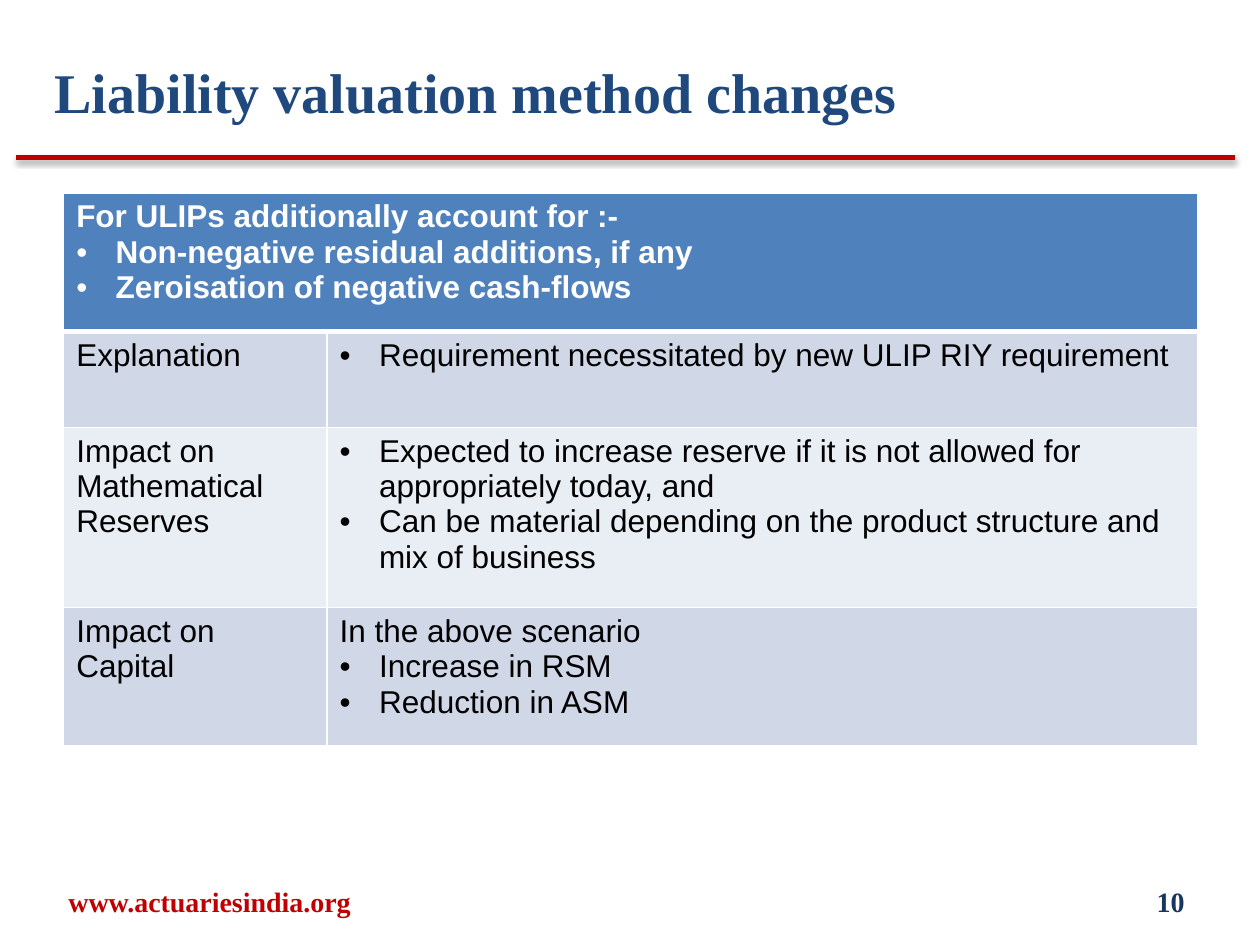
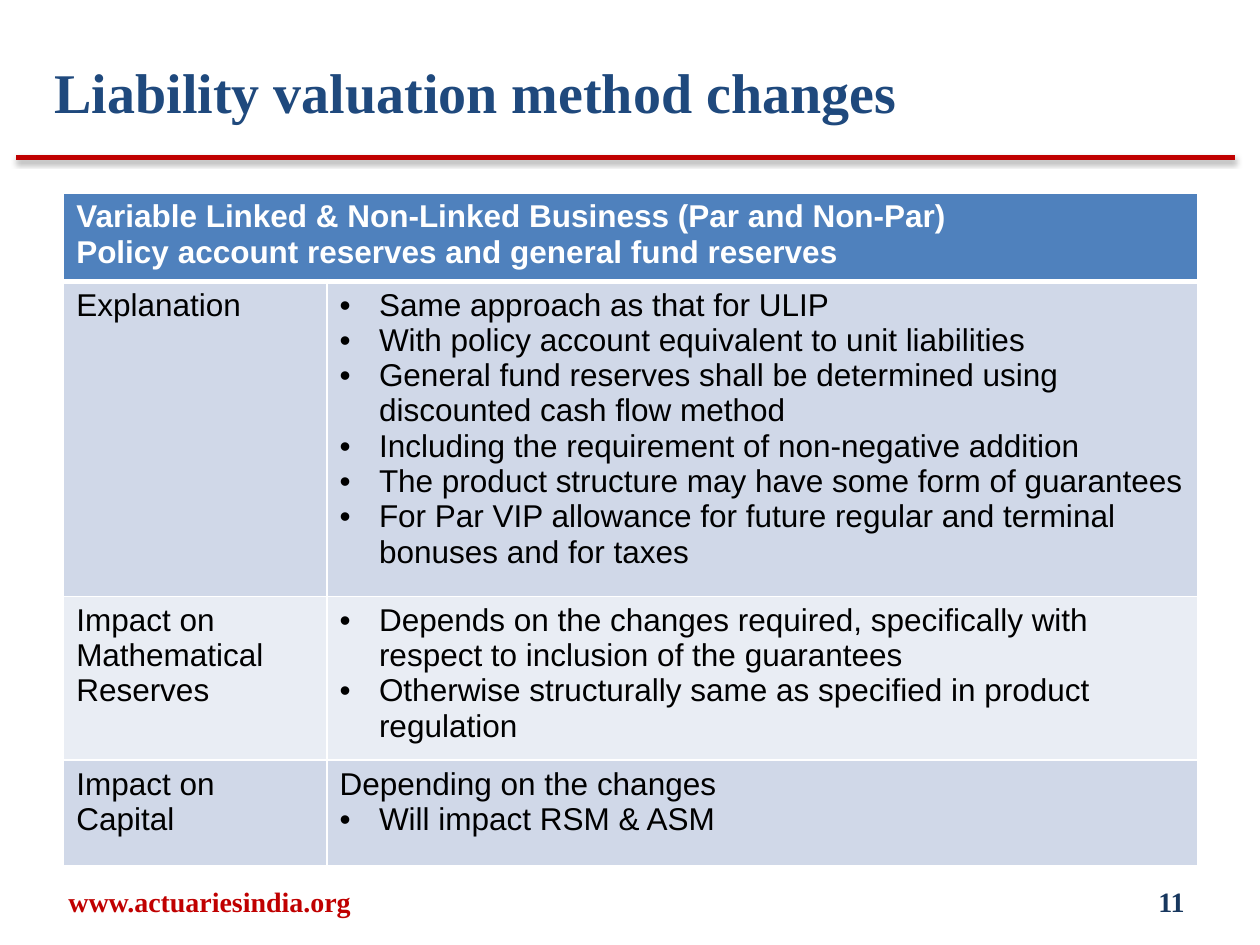
from lxml.etree import SubElement as Sub
from pptx import Presentation
from pptx.dml.color import RGBColor
from pptx.enum.shapes import MSO_CONNECTOR as Link
from pptx.enum.text import MSO_ANCHOR as Anchor, MSO_AUTO_SIZE as Fit, PP_ALIGN as Align
from pptx.oxml.ns import qn
from pptx.util import Pt

RED = RGBColor(0xC0, 0x00, 0x00)
NAVY = RGBColor(0x17, 0x37, 0x5E)
BLUE = RGBColor(0x1F, 0x49, 0x7D)
HEAD = RGBColor(0x4F, 0x81, 0xBD)
DARK = RGBColor(0xD0, 0xD8, 0xE8)
PALE = RGBColor(0xE9, 0xED, 0xF4)
WHITE = RGBColor(0xFF, 0xFF, 0xFF)
BLACK = RGBColor(0x00, 0x00, 0x00)

TITLE = "Liability valuation method changes"
SITE = "www.actuariesindia.org"
FIRST = 10
LABELS = ["Explanation", "Impact on Mathematical Reserves", "Impact on Capital"]
DOT = "• "  # marks a bulleted line in the lists below

SLIDES = [
    {
        "head": ["For ULIPs additionally account for :-",
                 "• Non-negative residual additions, if any",
                 "• Zeroisation of negative cash-flows"],
        "notes": [
            ["• Requirement necessitated by new ULIP RIY requirement"],
            ["• Expected to increase reserve if it is not allowed for appropriately today, and",
             "• Can be material depending on the product structure and mix of business"],
            ["In the above scenario",
             "• Increase in RSM",
             "• Reduction in ASM"],
        ],
        "rows": [79, 55, 103, 79],
    },
    {
        "head": ["Variable Linked & Non-Linked Business (Par and Non-Par)",
                 "Policy account reserves and general fund reserves"],
        "notes": [
            ["• Same approach as that for ULIP",
             "• With policy account equivalent to unit liabilities",
             "• General fund reserves shall be determined using discounted cash flow method",
             "• Including the requirement of non-negative addition",
             "• The product structure may have some form of guarantees",
             "• For Par VIP allowance for future regular and terminal bonuses and for taxes"],
            ["• Depends on the changes required, specifically with respect to "
             "inclusion of the guarantees",
             "• Otherwise structurally same as specified in product regulation"],
            ["Depending on the changes",
             "• Will impact RSM & ASM"],
        ],
        "rows": [47, 168.5, 87.5, 60.5],
    },
]

COLS = [150.5, 497.5]
INDENT = 22.5
TITLE_FONT = {"name": "Times New Roman", "size": Pt(32), "bold": True}
FOOT_FONT = {"name": "Times New Roman", "size": Pt(16), "bold": True}
CELL_FONT = {"name": "Arial", "size": Pt(18)}


def style(font, look, color):
    for key, value in look.items():
        setattr(font, key, value)
    font.color.rgb = color


def add_rule(slide):
    line = slide.shapes.add_connector(Link.STRAIGHT, Pt(9.4), Pt(90), Pt(705.6), Pt(90))
    line.line.color.rgb = RED
    line.line.width = Pt(3)
    glow = Sub(line._element.spPr, qn("a:effectLst"))
    shade = Sub(glow, qn("a:outerShdw"), blurRad=str(Pt(3.1)), dist=str(Pt(1.6)),
                dir="5400000", rotWithShape="0")
    tone = Sub(shade, qn("a:srgbClr"), val=str(BLACK))
    Sub(tone, qn("a:alpha"), val="38000")


def add_foot(slide, text, left, width, align, color):
    box = slide.shapes.add_textbox(Pt(left), Pt(500.4), Pt(width), Pt(28.8))
    frame = box.text_frame
    frame.word_wrap = True
    frame.vertical_anchor = Anchor.MIDDLE
    para = frame.paragraphs[0]
    para.text = text
    para.alignment = align
    style(para.runs[0].font, FOOT_FONT, color)


def set_title(slide):
    title = slide.shapes.title
    title.left, title.top, title.width, title.height = map(Pt, (24, 24, 534, 48))
    frame = title.text_frame
    frame.text = TITLE
    frame.auto_size = Fit.NONE
    frame.vertical_anchor = Anchor.TOP
    frame.margin_top = Pt(9)
    para = frame.paragraphs[0]
    para.alignment = Align.LEFT
    style(para.runs[0].font, TITLE_FONT, BLUE)


def fill_cell(cell, lines, fill, color, bold, top=1, bottom=1):
    """Draw white borders, then the fill, then the lines of text."""
    props = cell._tc.get_or_add_tcPr()
    for side, width in zip("LRTB", (1, 1, top, bottom)):
        edge = Sub(props, qn(f"a:ln{side}"), w=str(Pt(width)))
        Sub(Sub(edge, qn("a:solidFill")), qn("a:srgbClr"), val=str(WHITE))
    cell.fill.solid()
    cell.fill.fore_color.rgb = fill
    frame = cell.text_frame
    for i, line in enumerate(lines):
        para = frame.add_paragraph() if i else frame.paragraphs[0]
        if line.startswith(DOT):
            form = para._p.get_or_add_pPr()
            form.set("marL", str(Pt(INDENT)))
            form.set("indent", str(-Pt(INDENT)))
            Sub(form, qn("a:buFont"), typeface="Arial")
            Sub(form, qn("a:buChar"), char=DOT.strip())
        para.text = line.removeprefix(DOT)
        style(para.runs[0].font, CELL_FONT | {"bold": bold}, color)


def add_grid(slide, data):
    rows = data["rows"]
    grid = slide.shapes.add_table(len(rows), len(COLS), Pt(36.4), Pt(110.3),
                                  Pt(sum(COLS)), Pt(sum(rows))).table
    for col, width in zip(grid.columns, COLS):
        col.width = Pt(width)
    for row, height in zip(grid.rows, rows):
        row.height = Pt(height)
    grid.cell(0, 0).merge(grid.cell(0, 1))
    for c, lines in enumerate((data["head"], [])):
        fill_cell(grid.cell(0, c), lines, HEAD, WHITE, True, bottom=3)
    for r, (label, notes) in enumerate(zip(LABELS, data["notes"]), 1):
        for c, lines in enumerate(([label], notes)):
            fill_cell(grid.cell(r, c), lines, DARK if r % 2 else PALE, BLACK, False,
                      top=3 if r == 1 else 1)


def main():
    deck = Presentation()
    deck.slide_width, deck.slide_height = Pt(720), Pt(540)
    for number, data in enumerate(SLIDES, FIRST):
        slide = deck.slides.add_slide(deck.slide_layouts[5])
        add_rule(slide)
        add_foot(slide, SITE, 5.8, 228, Align.CENTER, RED)
        add_foot(slide, str(number), 516, 168, Align.RIGHT, NAVY)
        set_title(slide)
        add_grid(slide, data)
    deck.save("out.pptx")


if __name__ == "__main__":
    main()
